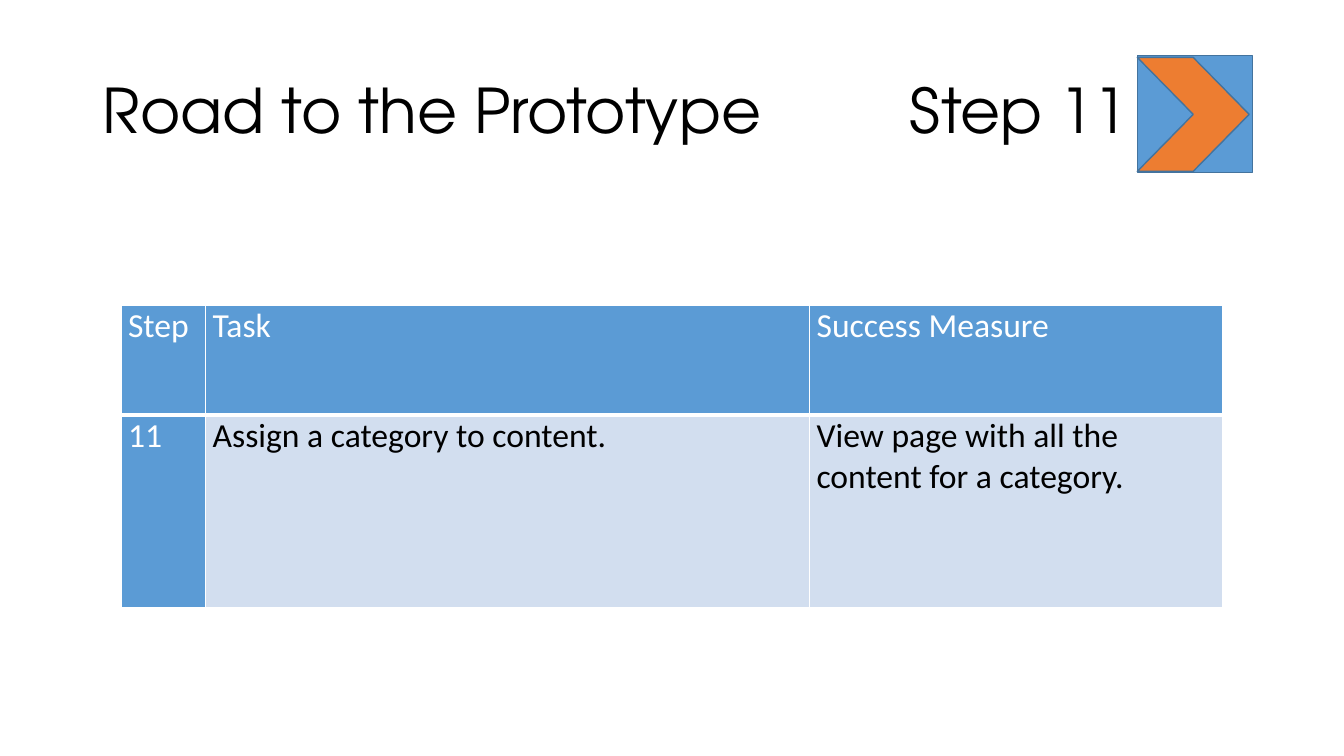
from pptx import Presentation
from pptx.dml.color import RGBColor
from pptx.enum.shapes import MSO_SHAPE
from pptx.enum.text import MSO_ANCHOR, MSO_AUTO_SIZE, PP_ALIGN
from pptx.oxml.ns import qn
from pptx.util import Pt
from lxml.etree import SubElement

PX = 9144
COLORS = {
    "text": "000000",
    "white": "FFFFFF",
    "blue": "5B9BD5",
    "pale": "D2DEEF",
    "orange": "ED7D31",
    "outline": "43739E",
}


def apply(target, **values):
    for key, value in values.items():
        setattr(target, key, value)


class StepSlide:
    heading_font = "TeX Gyre Adventor"
    body_font = "Calibri"

    def __init__(self, deck):
        self.slide = deck.slides.add_slide(deck.slide_layouts[5])

    def color(self, name):
        return RGBColor.from_string(COLORS[name])

    def paint(self, fill, name):
        fill.solid()
        fill.fore_color.rgb = self.color(name)

    def style(self, font, name, size, color):
        apply(font, name=name, size=Pt(size), bold=False)
        font.color.rgb = self.color(color)

    def title(self, text, box, tab_stops):
        heading = self.slide.shapes.title
        apply(heading, **dict(zip(("left", "top", "width", "height"), (v * PX for v in box))))
        frame = heading.text_frame
        apply(frame, text=text, word_wrap=True, auto_size=MSO_AUTO_SIZE.NONE,
              vertical_anchor=MSO_ANCHOR.MIDDLE)
        line = frame.paragraphs[0]
        apply(line, alignment=PP_ALIGN.LEFT, line_spacing=0.9)
        self.style(line.runs[0].font, self.heading_font, 44, "text")
        tabs = SubElement(line._p.get_or_add_pPr(), qn("a:tabLst"))
        for stop in tab_stops:
            SubElement(tabs, qn("a:tab"), pos=str(stop * PX), algn="l")

    def icon(self, parts):
        group = self.slide.shapes.add_group_shape()
        for preset, box, color in parts:
            part = group.shapes.add_shape(preset, *(v * PX for v in box))
            part.shadow.inherit = False
            self.paint(part.fill, color)
            part.line.width = Pt(1)
            part.line.color.rgb = self.color("outline")

    def borders(self, cell, bottom):
        properties = cell._tc.get_or_add_tcPr()
        for side, width in (("L", 1), ("R", 1), ("T", 1), ("B", bottom)):
            edge = SubElement(properties, qn(f"a:ln{side}"), w=str(Pt(width)))
            solid = SubElement(edge, qn("a:solidFill"))
            SubElement(solid, qn("a:srgbClr"), val=COLORS["white"])

    def table(self, rows, left, top, widths, heights):
        table = self.slide.shapes.add_table(
            len(rows), len(widths), left * PX, top * PX,
            sum(widths) * PX, sum(heights) * PX).table
        for column, width in zip(table.columns, widths):
            column.width = width * PX
        for r, (texts, height) in enumerate(zip(rows, heights)):
            table.rows[r].height = height * PX
            for c, text in enumerate(texts):
                header = r == 0 or c == 0
                cell = table.cell(r, c)
                apply(cell, text=text, margin_left=7 * PX, margin_right=7 * PX,
                      margin_top=0, margin_bottom=0)
                self.borders(cell, 3 if r == 0 else 1)
                self.paint(cell.fill, "blue" if header else "pale")
                self.style(cell.text_frame.paragraphs[0].runs[0].font,
                           self.body_font, 24, "white" if header else "text")


def main():
    deck = Presentation()
    apply(deck, slide_width=1333 * PX, slide_height=750 * PX)
    page = StepSlide(deck)
    page.title("Road to the Prototype\t\tStep 11", (92, 40, 1150, 145), (700, 800))
    page.icon([
        (MSO_SHAPE.ACTION_BUTTON_CUSTOM, (1128, 55, 114, 116), "blue"),
        (MSO_SHAPE.CHEVRON, (1128, 57, 111, 113), "orange"),
    ])
    page.table([
        ("Step", "Task", "Success Measure"),
        ("11", "Assign a category to content.",
         "View page with all the content for a category."),
    ], 120, 303, (84, 599, 410), (109, 191))
    deck.save("out.pptx")


if __name__ == "__main__":
    main()
